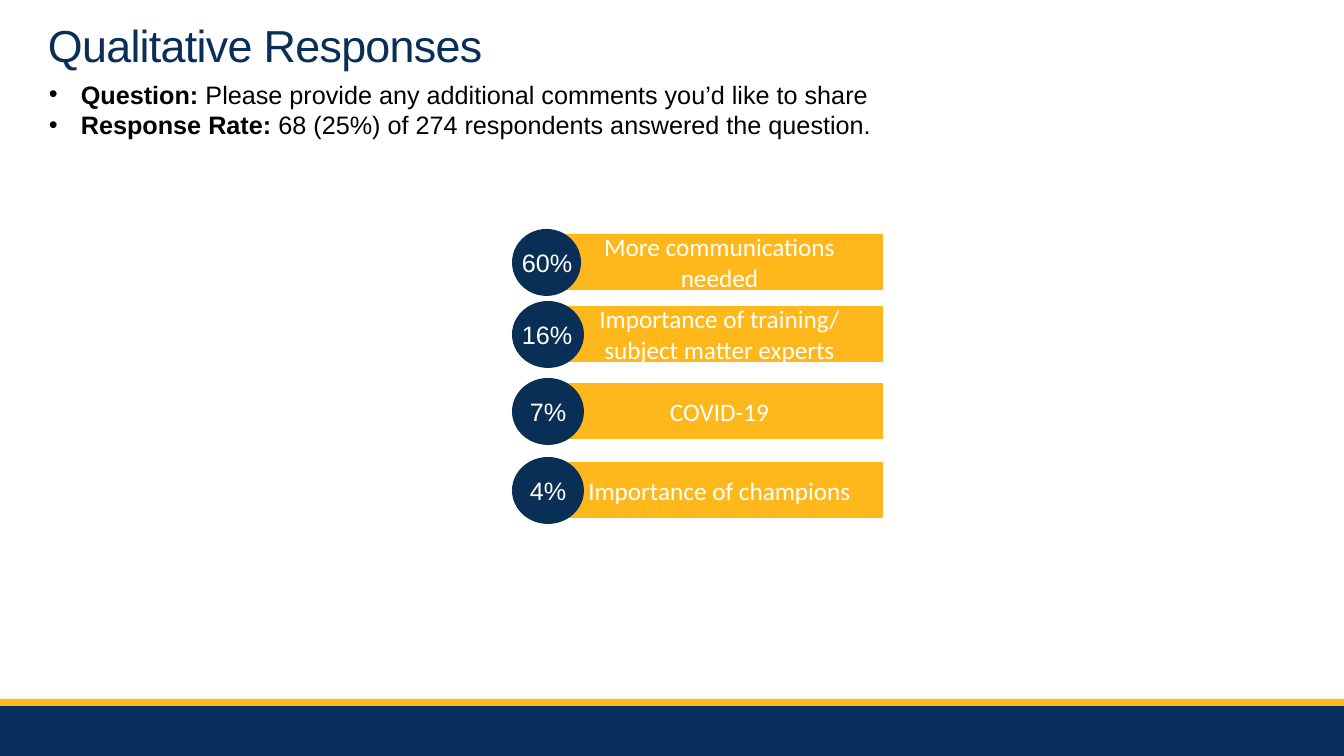
"""Build the Qualitative Responses survey slide."""
from dataclasses import dataclass

from lxml.etree import SubElement
from pptx import Presentation
from pptx.dml.color import RGBColor
from pptx.enum.shapes import MSO_SHAPE
from pptx.enum.text import MSO_ANCHOR, MSO_AUTO_SIZE, PP_ALIGN
from pptx.oxml.ns import qn
from pptx.shapes.autoshape import Shape
from pptx.shapes.shapetree import GroupShapes, SlideShapes
from pptx.text.text import TextFrame, _Paragraph, _Run
from pptx.util import Emu, Pt

EMU_PER_PX = 914400 / 100.8
NAVY, FOOTER_NAVY, GOLD = "092F57", "092F61", "FFB81C"
WHITE, BLACK = "FFFFFF", "000000"
CIRCLE_LEFT, LABEL_SPAN = 512, 72
BAR_LEFT, BAR_WIDTH, BAR_HEIGHT = 556, 327, 56


@dataclass(frozen=True)
class Theme:
    """One answer theme with its share of responses."""

    share: str
    lines: tuple[str, ...]
    top: int
    circle_width: int = 72
    label_width: int = 57


@dataclass(frozen=True)
class Fact:
    """One bullet with a bold lead."""

    lead: str
    detail: str


THEMES = (
    Theme("60%", ("More communications needed",), 234, 69, 72),
    Theme("16%", ("Importance of training/", "subject matter experts"), 306, label_width=72),
    Theme("7%", ("COVID-19",), 383),
    Theme("4%", ("Importance of champions",), 462),
)
FACTS = (
    Fact("Question:", " Please provide any additional comments you’d like to share"),
    Fact("Response Rate: ", "68 (25%) of 274 respondents answered the question."),
)


def px(length: int) -> Emu:
    """Convert pixels to EMU."""
    return Emu(round(length * EMU_PER_PX))


def colour(value: str) -> RGBColor:
    """Read a hex colour."""
    return RGBColor.from_string(value)


def add_span(para: _Paragraph, text: str, ink: str, size: int = 18,
             font: str = "Arial", bold: bool = False) -> _Run:
    """Append one formatted run."""
    span = para.add_run()
    span.text = text
    span.font.name = font
    span.font.size = Pt(size)
    span.font.bold = bold
    span.font.color.rgb = colour(ink)
    return span


def next_para(frame: TextFrame, index: int) -> _Paragraph:
    """Return the first paragraph or append another."""
    return frame.paragraphs[0] if index == 0 else frame.add_paragraph()


def add_block(shapes: SlideShapes | GroupShapes, kind: MSO_SHAPE, left: int, top: int,
              width: int, height: int, fill: str) -> Shape:
    """Draw a flat filled shape without outline."""
    block = shapes.add_shape(kind, px(left), px(top), px(width), px(height))
    block.shadow.inherit = False
    block.fill.solid()
    block.fill.fore_color.rgb = colour(fill)
    block.line.fill.background()
    return block


def add_box(shapes: SlideShapes | GroupShapes, left: int, top: int,
            width: int, height: int, wrap: bool = True) -> TextFrame:
    """Add a text box and return its frame."""
    box = shapes.add_textbox(px(left), px(top), px(width), px(height))
    box.text_frame.word_wrap = wrap
    return box.text_frame


def add_bullet(para: _Paragraph) -> None:
    """Give a paragraph a hanging bullet."""
    properties = para._p.get_or_add_pPr()
    properties.set("marL", str(px(32)))
    properties.set("indent", str(-px(32)))
    SubElement(properties, qn("a:buFont"), typeface="Arial")
    SubElement(properties, qn("a:buChar"), char="•")


def add_heading(shapes: SlideShapes) -> None:
    """Add the title and the two facts."""
    title = add_box(shapes, 38, 21, 1268, 56)
    title.vertical_anchor = MSO_ANCHOR.MIDDLE
    para = title.paragraphs[0]
    para.line_spacing = 0.85
    span = add_span(para, "Qualitative Responses", NAVY, 32)
    span.font._element.set("spc", "-50")

    facts = add_box(shapes, 39, 74, 1279, 72)
    facts.auto_size = MSO_AUTO_SIZE.SHAPE_TO_FIT_TEXT
    for index, fact in enumerate(FACTS):
        para = next_para(facts, index)
        add_bullet(para)
        add_span(para, fact.lead, BLACK, bold=True)
        add_span(para, fact.detail, BLACK)


def add_theme(shapes: SlideShapes, theme: Theme) -> None:
    """Group a theme bar with its percentage circle."""
    members = shapes.add_group_shape().shapes
    bar = add_block(members, MSO_SHAPE.RECTANGLE, BAR_LEFT, theme.top,
                    BAR_WIDTH, BAR_HEIGHT, GOLD)
    frame = bar.text_frame
    frame.word_wrap = True
    frame.vertical_anchor = MSO_ANCHOR.MIDDLE
    for index, line in enumerate(theme.lines):
        para = next_para(frame, index)
        para.alignment = PP_ALIGN.CENTER
        add_span(para, line, WHITE, font="Calibri")
    add_block(members, MSO_SHAPE.OVAL, CIRCLE_LEFT, theme.top - 5,
              theme.circle_width, 67, NAVY)
    label_left = CIRCLE_LEFT + (LABEL_SPAN - theme.label_width + 1) // 2
    label = add_box(members, label_left, theme.top + 8, theme.label_width, 40, wrap=False)
    label.auto_size = MSO_AUTO_SIZE.SHAPE_TO_FIT_TEXT
    add_span(label.paragraphs[0], theme.share, WHITE)


def main() -> None:
    """Build and save the deck."""
    deck = Presentation()
    deck.slide_width, deck.slide_height = px(1344), px(756)
    page = deck.slides.add_slide(deck.slide_layouts[6])
    add_block(page.shapes, MSO_SHAPE.RECTANGLE, 0, 706, 1344, 50, FOOTER_NAVY)
    add_block(page.shapes, MSO_SHAPE.RECTANGLE, 0, 699, 1344, 7, GOLD)
    add_heading(page.shapes)
    for theme in THEMES:
        add_theme(page.shapes, theme)
    deck.save("out.pptx")


if __name__ == "__main__":
    main()
